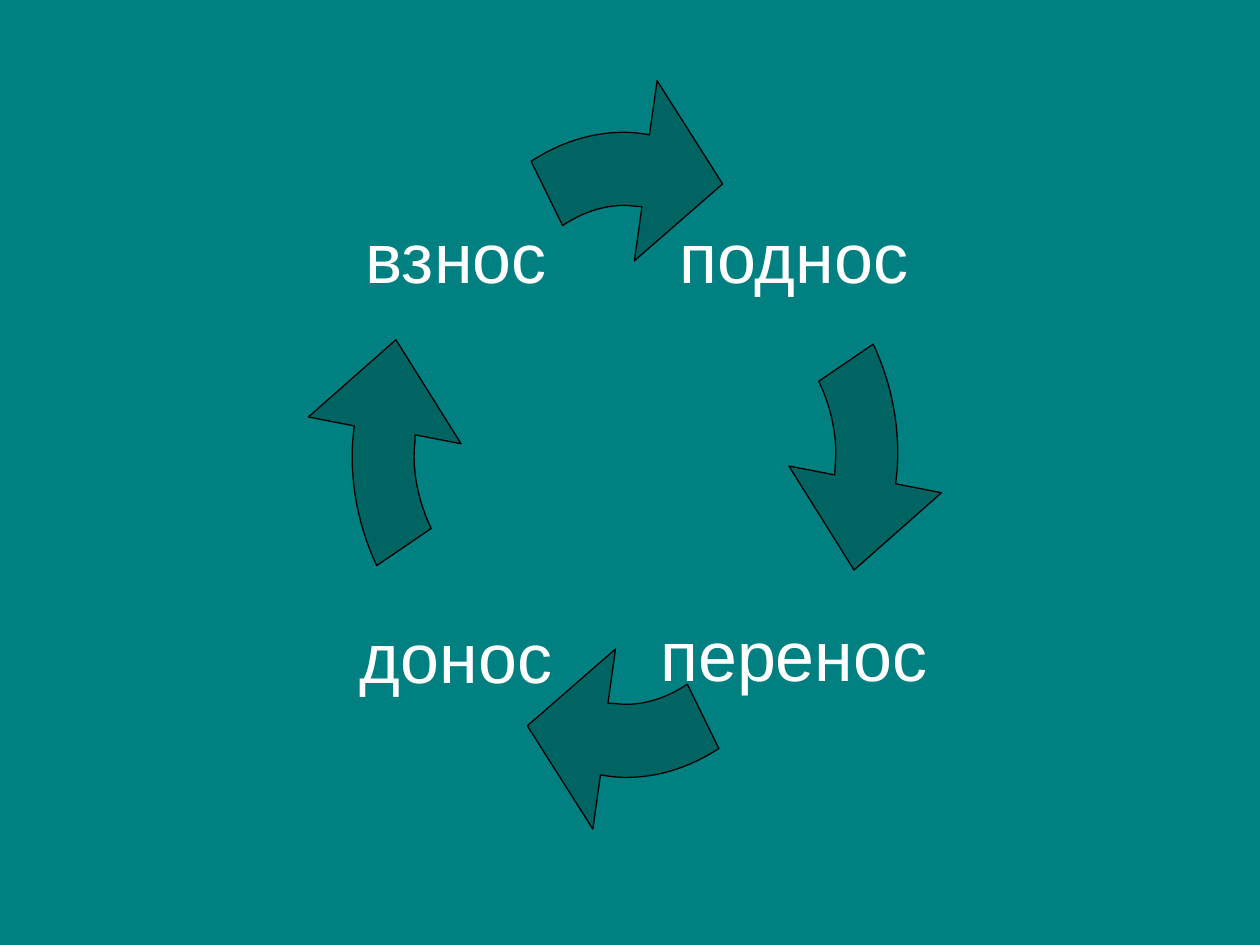
from lxml.etree import SubElement as Sub
from pptx import Presentation as Deck
from pptx.dml.color import RGBColor as Color
from pptx.enum.shapes import MSO_SHAPE as Kind
from pptx.enum.text import MSO_ANCHOR as Anchor, PP_ALIGN as Align
from pptx.oxml.ns import qn
from pptx.util import Inches, Pt

TEAL = Color(0x00, 0x80, 0x80)
DARK = Color(0x00, 0x64, 0x62)
BLACK = Color(0x00, 0x00, 0x00)
WHITE = Color(0xFF, 0xFF, 0xFF)

COLS, ROWS = 10, 7.5
MID = (4.96, 3.61)
WIDE, HIGH = 2.95, 3.48

OUTLINE = [
    ("moveTo", [(161, 59)]),
    ("cubicBezTo", [(156, 59), (151, 58), (147, 58)]),
    ("cubicBezTo", [(130, 58), (113, 64), (98, 74)]),
    ("lnTo", [(73, 23)]),
    ("cubicBezTo", [(96, 8), (121, 0), (147, 0)]),
    ("cubicBezTo", [(154, 0), (161, 1), (167, 2)]),
    ("lnTo", [(173, -41)]),
    ("lnTo", [(225, 41)]),
    ("lnTo", [(155, 102)]),
    ("close", []),
]

ARROWS = [
    (0, -0.82, WIDE, HIGH),
    (0.69, 0, HIGH, WIDE),
    (0, 0.82, WIDE, HIGH),
    (-0.69, 0, HIGH, WIDE),
]

WORDS = [
    ("поднос", 6.3, 2.03),
    ("донос", 3.62, 5.2),
    ("взнос", 3.62, 2.03),
    ("перенос", 6.3, 5.19),
]


def apply(item, values):
    for name, value in values.items():
        setattr(item, name, value)


class Page:
    frame = {
        "margin_left": 0, "margin_top": 0, "margin_right": 0,
        "margin_bottom": 0, "word_wrap": False,
        "vertical_anchor": Anchor.MIDDLE,
    }
    font = {"name": "Arial", "size": Pt(40)}

    def __init__(self, deck):
        self.col = deck.slide_width / COLS
        self.row = deck.slide_height / ROWS
        self.slide = deck.slides.add_slide(deck.slide_layouts[6])
        self.slide.background.fill.solid()
        self.slide.background.fill.fore_color.rgb = TEAL

    def box(self, x, y, wide, high):
        return (round((x - wide / 2) * self.col),
                round((y - high / 2) * self.row),
                round(wide * self.col), round(high * self.row))

    def arrow(self, x, y, wide, high, angle):
        w, h = round(WIDE * 100), round(HIGH * 100)
        pen = self.slide.shapes.build_freeform(0, 0, scale=self.col / 100)
        pen.add_line_segments([(w, 0), (w, h), (0, h)])
        shape = pen.convert_to_shape()
        track = next(shape.element.iter(qn("a:path")))
        for old in list(track):
            track.remove(old)
        for verb, spots in OUTLINE:
            step = Sub(track, qn("a:" + verb))
            for px, py in spots:
                Sub(step, qn("a:pt"), x=str(px), y=str(py))
        names = ("left", "top", "width", "height")
        apply(shape, dict(zip(names, self.box(x, y, wide, high))))
        shape.rotation = angle
        shape.shadow.inherit = False
        shape.fill.solid()
        shape.fill.fore_color.rgb = DARK
        shape.line.color.rgb = BLACK
        shape.line.width = Pt(0.75)

    def word(self, text, x, y, wide=1.11, high=1.31):
        shape = self.slide.shapes.add_shape(
            Kind.RECTANGLE, *self.box(x, y, wide, high))
        shape.shadow.inherit = False
        shape.fill.background()
        shape.line.fill.background()
        apply(shape.text_frame, self.frame)
        para = shape.text_frame.paragraphs[0]
        para.alignment = Align.CENTER
        run = para.add_run()
        run.text = text
        apply(run.font, self.font)
        run.font.color.rgb = WHITE


def main():
    deck = Deck()
    apply(deck, {"slide_width": Inches(COLS), "slide_height": Inches(ROWS)})
    page = Page(deck)
    for turn, (dx, dy, wide, high) in enumerate(ARROWS):
        page.arrow(MID[0] + dx, MID[1] + dy, wide, high, turn * 90)
    for word in WORDS:
        page.word(*word)
    deck.save("out.pptx")


if __name__ == "__main__":
    main()
